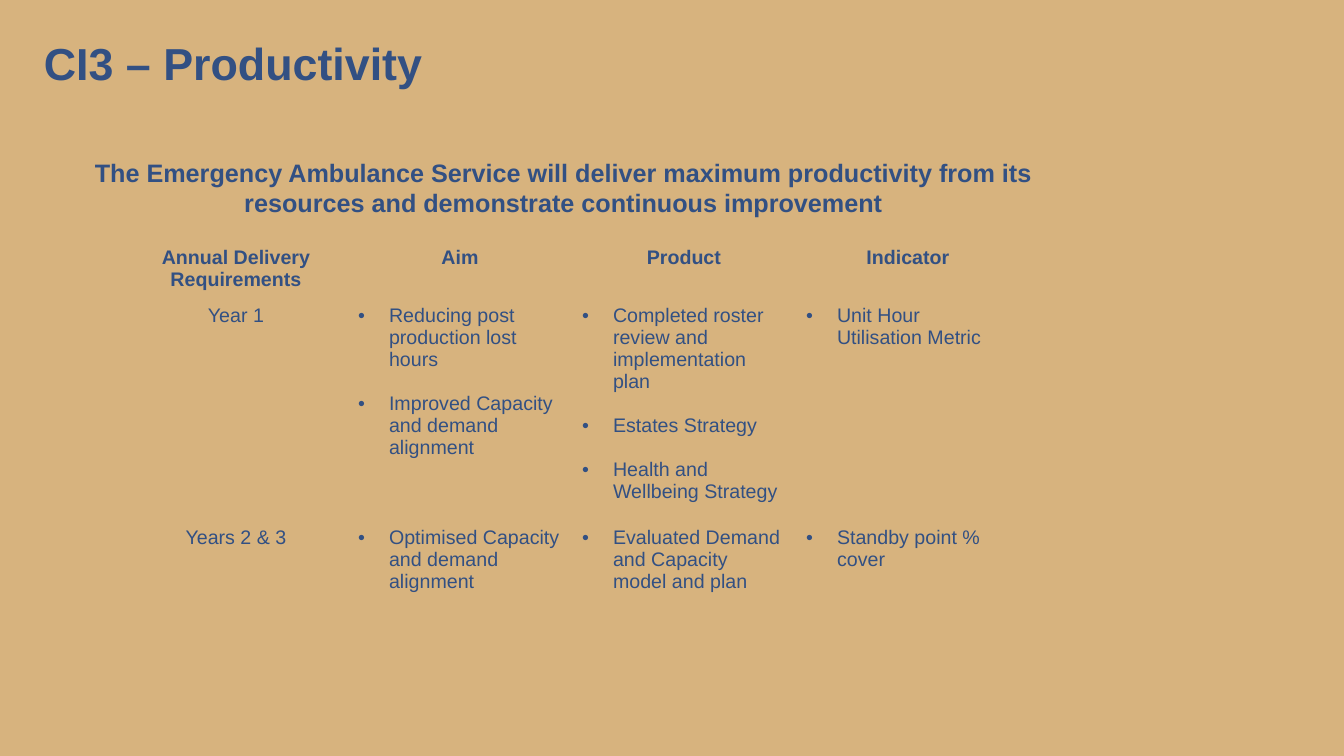
from lxml.etree import SubElement
from pptx import Presentation
from pptx.dml.color import RGBColor
from pptx.enum.shapes import MSO_SHAPE
from pptx.enum.text import MSO_ANCHOR, PP_ALIGN
from pptx.oxml.ns import qn
from pptx.util import Pt

SCALE = 914400 / 100.8
SAND = "D7B37E"
BLUE = "325083"
HEADS = ["Annual Delivery Requirements", "Aim", "Product", "Indicator"]
YEARS = [
    ("Year 1", [
        ["Reducing post production lost hours",
         "Improved Capacity and demand alignment"],
        ["Completed roster review and implementation plan",
         "Estates Strategy",
         "Health and Wellbeing Strategy"],
        ["Unit Hour Utilisation Metric"],
    ]),
    ("Years 2 & 3", [
        ["Optimised Capacity and demand alignment"],
        ["Evaluated Demand and Capacity model and plan"],
        ["Standby point % cover"],
    ]),
]


def px(n):
    return round(n * SCALE)


def color(text):
    return RGBColor.from_string(text)


def paint(fill):
    fill.solid()
    fill.fore_color.rgb = color(SAND)


def style(para, size, bold, align):
    para.alignment = align
    for run in para.runs:
        font = run.font
        font.name = "Arial"
        font.size = Pt(size)
        font.bold = bold
        font.color.rgb = color(BLUE)


def title(slide, box):
    shape = slide.shapes.add_shape(MSO_SHAPE.RECTANGLE, *map(px, box))
    shape.shadow.inherit = False
    paint(shape.fill)
    shape.line.fill.background()
    frame = shape.text_frame
    frame.vertical_anchor = MSO_ANCHOR.MIDDLE
    frame.text = "CI3 – Productivity"
    para = frame.paragraphs[0]
    para.line_spacing = Pt(43)
    style(para, 32, True, PP_ALIGN.LEFT)


def lead(slide, box):
    frame = slide.shapes.add_textbox(*map(px, box)).text_frame
    frame.word_wrap = True
    frame.text = ("The Emergency Ambulance Service will deliver maximum productivity "
                  "from its resources and demonstrate continuous improvement")
    para = frame.paragraphs[0]
    props = para._p.get_or_add_pPr()
    props.set("marL", str(px(101)))
    props.set("indent", "0")
    style(para, 18, True, PP_ALIGN.CENTER)


def border(cell, base):
    props = cell._tc.get_or_add_tcPr()
    for side, width in zip("LRTB", (1, 1, 1, base)):
        line = SubElement(props, qn(f"a:ln{side}"), w=str(Pt(width)))
        fill = SubElement(line, qn("a:solidFill"))
        SubElement(fill, qn("a:srgbClr"), val=SAND)


def label(cell, text, bold):
    cell.text_frame.text = text
    style(cell.text_frame.paragraphs[0], 14, bold, PP_ALIGN.CENTER)


def points(cell, items):
    frame = cell.text_frame
    frame.text = "\n".join(items)
    for i, para in enumerate(frame.paragraphs):
        if i:
            para.space_before = Pt(16)
        props = para._p.get_or_add_pPr()
        props.set("marL", str(px(31)))
        props.set("indent", str(-px(31)))
        SubElement(props, qn("a:buFont"), typeface="Arial")
        SubElement(props, qn("a:buChar"), char="•")
        style(para, 14, False, PP_ALIGN.LEFT)


def plan(slide, box, rows):
    frame = slide.shapes.add_table(len(rows), len(HEADS), *map(px, box))
    table = frame.table
    table.first_row = table.horz_banding = False
    for col in table.columns:
        col.width = px(box[2] / len(HEADS))
    for row, high in zip(table.rows, rows):
        row.height = px(high)
    for r in range(len(rows)):
        for c in range(len(HEADS)):
            cell = table.cell(r, c)
            border(cell, 1 if r else 3)
            paint(cell.fill)
    for c, head in enumerate(HEADS):
        label(table.cell(0, c), head, True)
    for r, (year, cells) in enumerate(YEARS, 1):
        label(table.cell(r, 0), year, False)
        for c, items in enumerate(cells, 1):
            points(table.cell(r, c), items)


def main():
    deck = Presentation()
    deck.slide_width = px(1344)
    deck.slide_height = px(756)
    slide = deck.slides.add_slide(deck.slide_layouts[6])
    paint(slide.background.fill)
    title(slide, (34, 19, 1056, 81))
    lead(slide, (-20, 152, 1066, 254))
    plan(slide, (124, 242, 896, 360), (57, 222, 81))
    deck.save("out.pptx")


if __name__ == "__main__":
    main()
